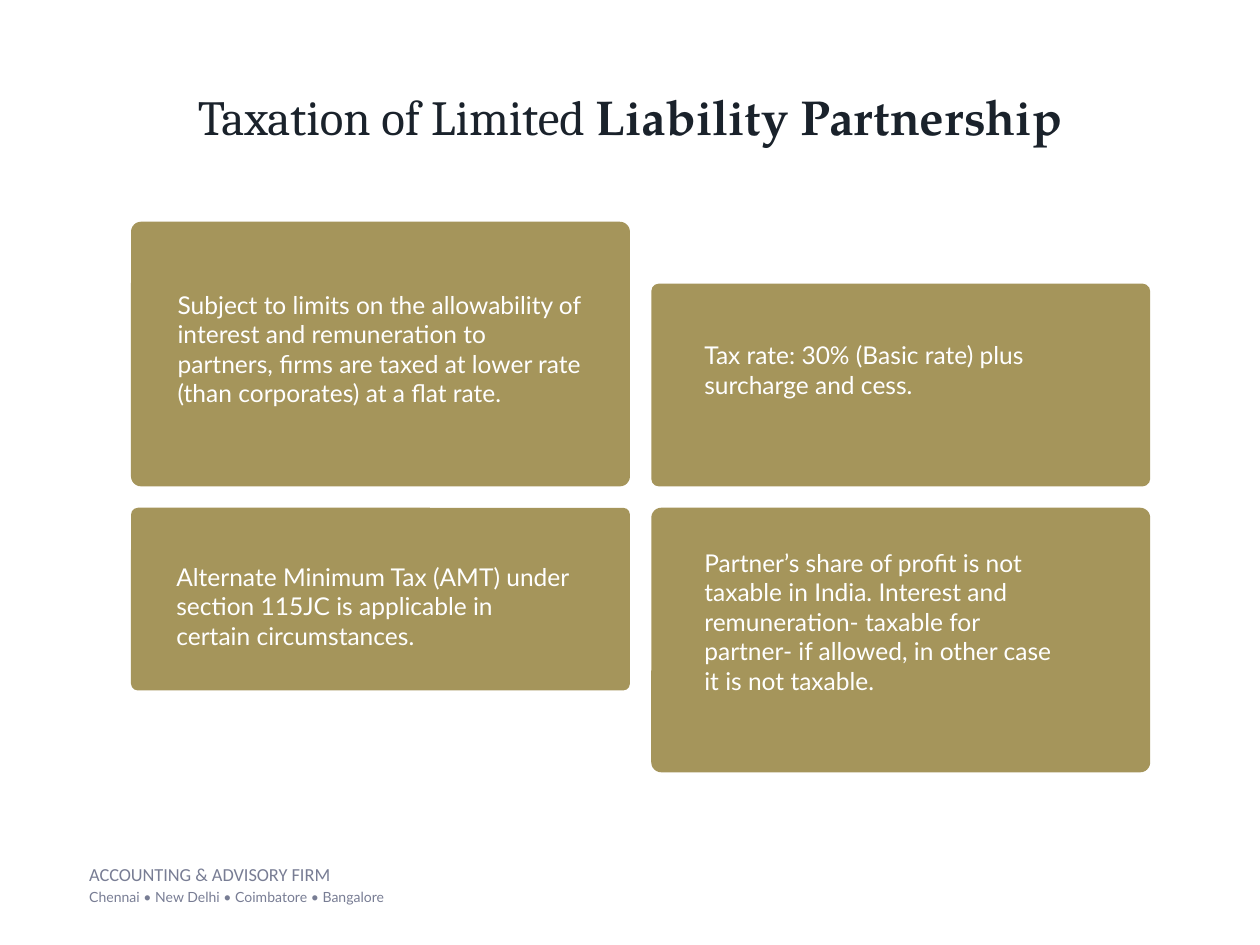
from pptx import Presentation
from pptx.dml.color import RGBColor
from pptx.enum import shapes, text
from pptx.util import Pt

THEME = {
    "card": "A5955B", "card_text": "FFFFFF", "title": "1A222B", "footer": "787D94",
    "body_font": "Lato", "title_font": "Cambria", "title_bold_font": "TeX Gyre Pagella",
    "firm_font": "Calibri",
    "title_size": 28, "body_size": 14, "firm_size": 10.5, "cities_size": 8,
}

TITLE = (("Taxation of Limited ", "title_font", False),
         ("Liability Partnership", "title_bold_font", True))
FIRM = "ACCOUNTING & ADVISORY FIRM"
CITIES = "Chennai • New Delhi • Coimbatore • Bangalore"

# Column, row, card height, text box (left, top, width, height), wording
CARDS = [
    (0, 0, 151.2, (97.9, 162, 238.3, 75.6),
     "Subject to limits on the allowability of interest and remuneration to "
     "partners, firms are taxed at lower rate (than corporates) at a flat rate."),
    (1, 0, 115.9, (398.9, 190.8, 216, 41.8),
     "Tax rate: 30% (Basic rate) plus surcharge and cess."),
    (0, 1, 104.4, (97.2, 317.5, 232.6, 58.3),
     "Alternate Minimum Tax (AMT) under section 115JC is applicable in "
     "certain circumstances."),
    (1, 1, 151.2, (398.9, 309.6, 215.3, 92.9),
     "Partner’s share of profit is not taxable in India. Interest and "
     "remuneration- taxable for partner- if allowed, in other case it is not taxable."),
]

GRID_LEFT, GRID_MIDDLE = 74.9, 284.05
CARD_WIDTH, GAP = 285.1, 12.2
CORNER = 0.038


def style(font, face, size, color, bold=False):
    font.name = THEME[face]
    font.size = Pt(THEME[size])
    font.color.rgb = RGBColor.from_string(THEME[color])
    font.bold = bold


def add_text_box(slide, box, inset=None):
    frame = slide.shapes.add_textbox(*map(Pt, box)).text_frame
    frame.word_wrap = True
    if inset is not None:
        frame.margin_left = frame.margin_right = Pt(inset)
        frame.margin_top = frame.margin_bottom = Pt(inset)
    return frame


def add_title(slide):
    paragraph = add_text_box(slide, (34.6, 52.6, 650.9, 36), 3.6).paragraphs[0]
    paragraph.alignment = text.PP_ALIGN.CENTER
    paragraph.line_spacing = 0.8
    for words, face, bold in TITLE:
        run = paragraph.add_run()
        run.text = words
        style(run.font, face, "title_size", "title", bold)


def add_card(slide, column, row, height):
    """Cards in a row share the edge that faces the gap between the rows."""
    left = GRID_LEFT + column * (CARD_WIDTH + GAP)
    top = GRID_MIDDLE + GAP / 2 if row else GRID_MIDDLE - GAP / 2 - height
    card = slide.shapes.add_shape(shapes.MSO_SHAPE.ROUNDED_RECTANGLE,
                                  Pt(left), Pt(top), Pt(CARD_WIDTH), Pt(height))
    card.adjustments[0] = CORNER
    card.shadow.inherit = False
    card.fill.solid()
    card.fill.fore_color.rgb = RGBColor.from_string(THEME["card"])
    card.line.fill.background()


def add_card_text(slide, box, words):
    paragraph = add_text_box(slide, box, 3.6).paragraphs[0]
    paragraph.text = words
    style(paragraph.font, "body_font", "body_size", "card_text")


def add_footer(slide):
    frame = add_text_box(slide, (43.9, 489.6, 343.4, 31.7))
    firm, cities = frame.paragraphs[0], frame.add_paragraph()
    firm.text, cities.text = FIRM, CITIES
    style(firm.font, "firm_font", "firm_size", "footer")
    cities.space_before = Pt(2.1)
    style(cities.font, "body_font", "cities_size", "footer")


def main():
    presentation = Presentation()
    presentation.slide_width, presentation.slide_height = Pt(720), Pt(540)
    slide = presentation.slides.add_slide(presentation.slide_layouts[6])
    add_footer(slide)
    add_title(slide)
    for column, row, height, box, words in CARDS:
        add_card(slide, column, row, height)
        add_card_text(slide, box, words)
    presentation.save("out.pptx")


if __name__ == "__main__":
    main()
